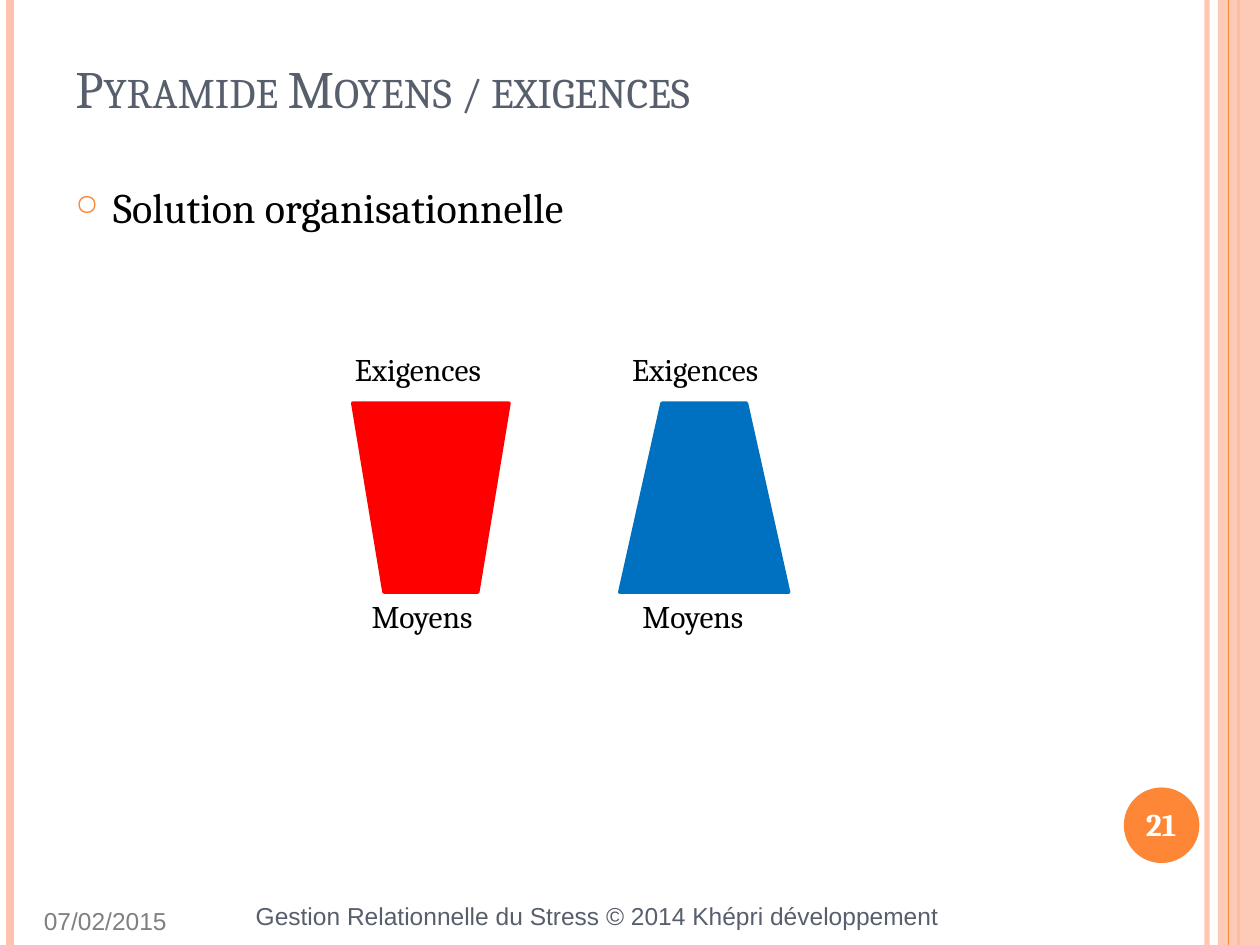
from dataclasses import dataclass, field

from lxml.etree import SubElement
from pptx import Presentation
from pptx.dml.color import RGBColor
from pptx.enum.shapes import MSO_CONNECTOR, MSO_SHAPE
from pptx.enum.text import MSO_ANCHOR, PP_ALIGN
from pptx.oxml.ns import qn
from pptx.util import Pt

WIDTH, HEIGHT = 720, 540
ORANGE, PEACH, SLATE = "FE8637", "FEC3AE", "575F6D"
RED, BLUE, BLACK, WHITE, GREY = "FF0000", "0070C0", "000000", "FFFFFF", "808080"


@dataclass
class Rule:
    x: float
    width: float
    color: str
    alpha: int = 100


@dataclass
class Block:
    kind: MSO_SHAPE
    box: tuple
    color: str
    line: float = 0
    alpha: int = 100


@dataclass
class Label:
    text: str
    box: tuple
    size: float
    color: str = BLACK
    face: str = "Cambria"
    bold: bool = False
    wrap: bool = True
    align: PP_ALIGN = PP_ALIGN.LEFT
    anchor: MSO_ANCHOR = MSO_ANCHOR.TOP
    run: dict = field(default_factory=dict)
    bullet: str = ""


def paint(fmt, color: str, alpha: int = 100) -> None:
    """Give a fill or font colour from a hex string; alpha is in percent."""
    if hasattr(fmt, "solid"):
        fmt.solid()
        target = fmt.fore_color
    else:
        target = fmt.color
    target.rgb = RGBColor.from_string(color)
    if alpha < 100:
        node = next(fmt._xPr.iter(qn("a:srgbClr")))
        SubElement(node, qn("a:alpha"), val=str(alpha * 1000))


def draw_rule(slide, rule: Rule) -> None:
    line = slide.shapes.add_connector(
        MSO_CONNECTOR.STRAIGHT, Pt(rule.x), Pt(0), Pt(rule.x), Pt(HEIGHT))
    line.line.width = Pt(rule.width)
    paint(line.line.fill, rule.color, rule.alpha)
    SubElement(line._element.spPr, qn("a:effectLst"))


def draw_block(slide, block: Block) -> None:
    shape = slide.shapes.add_shape(block.kind, *map(Pt, block.box))
    shape.shadow.inherit = False
    paint(shape.fill, block.color, block.alpha)
    if block.line:
        shape.line.width = Pt(block.line)
        paint(shape.line.fill, block.color)
    else:
        shape.line.fill.background()


def add_bullet(para, mark: str) -> None:
    props = para._p.get_or_add_pPr()
    indent = Pt(21.6)
    props.set("marL", str(indent))
    props.set("indent", str(-indent))
    SubElement(SubElement(props, qn("a:buClr")), qn("a:srgbClr"), val=ORANGE)
    SubElement(props, qn("a:buSzPct"), val="70000")
    SubElement(props, qn("a:buChar"), char=mark)


def draw_label(slide, label: Label) -> None:
    frame = slide.shapes.add_textbox(*map(Pt, label.box)).text_frame
    frame.word_wrap = label.wrap
    frame.vertical_anchor = label.anchor
    para = frame.paragraphs[0]
    para.alignment = label.align
    if label.bullet:
        add_bullet(para, label.bullet)
    run = para.add_run()
    run.text = label.text
    style = {"name": label.face, "size": Pt(label.size), "bold": label.bold}
    for key, value in style.items():
        setattr(run.font, key, value)
    paint(run.font, label.color)
    for key, value in label.run.items():
        run._r.get_or_add_rPr().set(key, value)


RULES = [Rule(689.8, 3, PEACH, 93), Rule(5.8, 4.5, PEACH), Rule(707.8, 1.5, ORANGE)]
BAND = Block(MSO_SHAPE.RECTANGLE, (696, 0, 24, HEIGHT), PEACH, alpha=87)
EDGE = Rule(702, 0.75, ORANGE)
BLOCKS = [
    Block(MSO_SHAPE.OVAL, (642.2, 450, 43.2, 43.2), ORANGE),
    Block(MSO_SHAPE.FLOWCHART_MANUAL_OPERATION, (201.6, 230.4, 89.3, 108), RED, 2),
    Block(MSO_SHAPE.TRAPEZOID, (354.2, 230.4, 96.5, 108), BLUE, 2),
]
LABELS = [
    Label("07/02/2015", (18, 514, 113, 26), 14, GREY, "Arial"),
    Label("Gestion Relationnelle du Stress © 2014 Khépri développement",
          (127.4, 511.2, 416.2, 28.8), 14, SLATE, "Arial", align=PP_ALIGN.RIGHT),
    Label("21", (638, 456.5, 51, 29), 18, WHITE, bold=True, align=PP_ALIGN.CENTER),
    Label("Pyramide Moyens / exigences", (36, 21.6, 588, 49.7), 30, SLATE,
          anchor=MSO_ANCHOR.BOTTOM, run={"cap": "small"}),
    Label("Solution organisationnelle", (36, 100, 588, 410), 24, bullet="○"),
]
# Left edges of the upper and lower caption of each pyramid
CAPTIONS = [(195.8, 205.2), (354.2, 360)]
for upper, lower in CAPTIONS:
    LABELS.append(Label("Exigences", (upper, 196.6, 98.6, 29), 18, wrap=False))
    LABELS.append(Label("Moyens", (lower, 337.7, 78.5, 29), 18, wrap=False))


def main() -> None:
    deck = Presentation()
    deck.slide_width, deck.slide_height = Pt(WIDTH), Pt(HEIGHT)
    slide = deck.slides.add_slide(deck.slide_layouts[6])
    paint(slide.background.fill, WHITE)
    for rule in RULES:
        draw_rule(slide, rule)
    draw_block(slide, BAND)
    draw_rule(slide, EDGE)
    for block in BLOCKS:
        draw_block(slide, block)
    for label in LABELS:
        draw_label(slide, label)
    deck.save("out.pptx")


if __name__ == "__main__":
    main()
